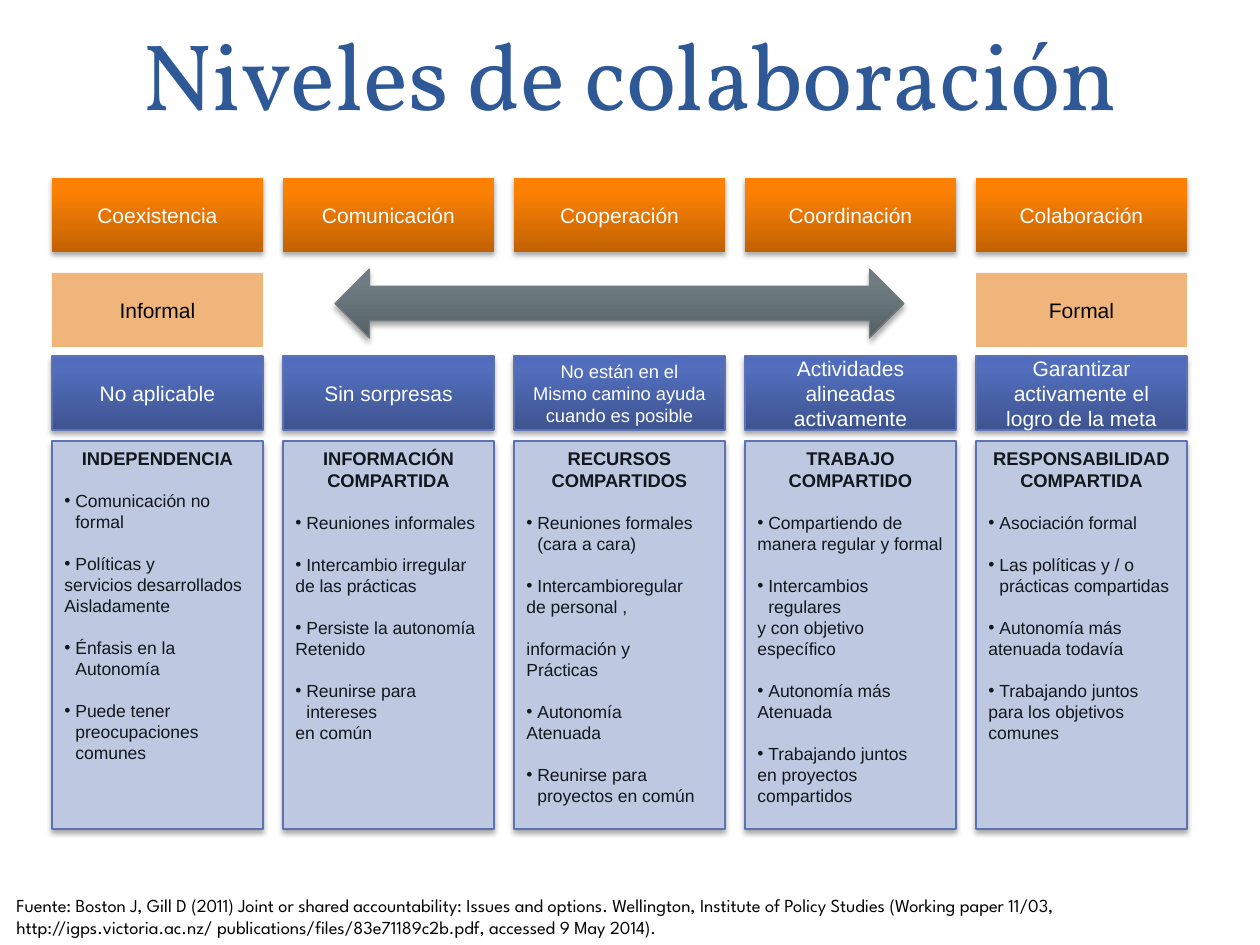
from lxml.etree import SubElement
from pptx import Presentation
from pptx.dml.color import RGBColor
from pptx.enum.shapes import MSO_SHAPE
from pptx.enum.text import MSO_ANCHOR, PP_ALIGN
from pptx.oxml.ns import qn
from pptx.util import Pt

SCALE = 914400 / 126
LEFT, STEP, WIDE, HIGH = 52, 231, 211, 74
HANG = 11
COLORS = {
    "title": "2F5897", "white": "FFFFFF", "black": "000000", "ink": "11171D",
    "peach": "F0B57A", "panel": "BFC8E1", "edge": "5C72B2", "rim": "727D82",
}
BLENDS = {
    "orange": ("C26203", "FB8004", "FF8002"),
    "blue": ("3E5490", "516DBB", "4F6CBE"),
    "gray": ("566065", "6F7D83", "6F7E84"),
}
LEVELS = ["Coexistencia", "Comunicación", "Cooperación", "Coordinación", "Colaboración"]
GOALS = [
    ("No aplicable", 12),
    ("Sin sorpresas", 12),
    ("No están en el\nMismo camino ayuda cuando es posible", 10.5),
    ("Actividades alineadas activamente", 12),
    ("Garantizar activamente el logro de la meta", 12),
]
CARDS = [
    ("INDEPENDENCIA", [
        ["Comunicación no formal"],
        ["Políticas y", "servicios desarrollados", "Aisladamente"],
        ["Énfasis en la Autonomía"],
        ["Puede tener preocupaciones comunes"]]),
    ("INFORMACIÓN\nCOMPARTIDA", [
        ["Reuniones informales"],
        ["Intercambio irregular", "de las prácticas"],
        ["Persiste la autonomía", "Retenido"],
        ["Reunirse para intereses", "en común"]]),
    ("RECURSOS COMPARTIDOS", [
        ["Reuniones formales (cara a cara)"],
        ["Intercambioregular", "de personal ,"],
        ["", "información y", "Prácticas"],
        ["Autonomía", "Atenuada"],
        ["Reunirse para proyectos en común"]]),
    ("TRABAJO COMPARTIDO", [
        ["Compartiendo de", "manera regular y formal"],
        ["Intercambios regulares", "y con objetivo\vespecífico"],
        ["Autonomía más", "Atenuada"],
        ["Trabajando juntos", "en proyectos compartidos"]]),
    ("RESPONSABILIDAD\nCOMPARTIDA", [
        ["Asociación formal"],
        ["Las políticas y / o prácticas compartidas"],
        ["Autonomía más", "atenuada todavía"],
        ["Trabajando juntos", "para los objetivos comunes"]]),
]
SOURCE = (
    "Fuente: Boston J, Gill D (2011) Joint or shared accountability: Issues and options. "
    "Wellington, Institute of Policy Studies (Working paper 11/03, "
    "http://igps.victoria.ac.nz/ publications/files/83e71189c2b.pdf, accessed 9 May 2014)."
)


def px(size):
    return int(size * SCALE)


def place(shape, *box):
    shape.left, shape.top, shape.width, shape.height = map(px, box)


def style(para, size, color, font="Arial", bold=False, align=PP_ALIGN.LEFT):
    para.alignment = align
    for run in para.runs:
        run.font.size = Pt(size)
        run.font.name = font
        run.font.bold = bold
        run.font.color.rgb = RGBColor.from_string(COLORS[color])


def blend(shape, name):
    shape.fill.gradient()
    shape.fill.gradient_angle = 90
    stops = shape._element.spPr.find(".//" + qn("a:gsLst"))
    for stop in list(stops):
        stops.remove(stop)
    for spot, color in zip((0, 80, 100), BLENDS[name]):
        stop = SubElement(stops, qn("a:gs"), pos=str(spot * 1000))
        SubElement(stop, qn("a:srgbClr"), val=color)


def shade(shape):
    effects = shape._element.spPr.find(qn("a:effectLst"))
    shadow = SubElement(effects, qn("a:outerShdw"), blurRad=str(Pt(3.1)), dist=str(Pt(1.8)),
                        dir="5400000", algn="ctr", rotWithShape="0")
    color = SubElement(shadow, qn("a:srgbClr"), val=COLORS["black"])
    SubElement(color, qn("a:alpha"), val="35000")


def add_block(slide, box, fill, line=None, deep=True, kind=MSO_SHAPE.RECTANGLE):
    shape = slide.shapes.add_shape(kind, *map(px, box))
    shape.shadow.inherit = False
    if fill in BLENDS:
        blend(shape, fill)
    else:
        shape.fill.solid()
        shape.fill.fore_color.rgb = RGBColor.from_string(COLORS[fill])
    if line:
        shape.line.color.rgb = RGBColor.from_string(COLORS[line])
        shape.line.width = Pt(0.75)
    else:
        shape.line.fill.background()
    if deep:
        shade(shape)
    return shape


def add_label(slide, box, text, fill, color="white", size=12, **look):
    shape = add_block(slide, box, fill, **look)
    shape.text_frame.text = text
    for para in shape.text_frame.paragraphs:
        style(para, size, color, align=PP_ALIGN.CENTER)


def add_dot(para):
    props = para._p.get_or_add_pPr()
    props.set("marL", str(px(HANG)))
    props.set("indent", str(-px(HANG)))
    SubElement(props, qn("a:buFont"), typeface="Arial")
    SubElement(props, qn("a:buChar"), char="•")


def add_card(slide, box, head, items):
    frame = add_block(slide, box, "panel", "edge").text_frame
    frame.vertical_anchor = MSO_ANCHOR.TOP
    frame.text = head
    for para in frame.paragraphs:
        style(para, 10.5, "ink", bold=True, align=PP_ALIGN.CENTER)
    for first, *rest in items:
        lines = [first, *rest] if first else rest
        for index, text in enumerate(lines):
            para = frame.add_paragraph()
            para.text = text
            if index == 0:
                if first:
                    add_dot(para)
                para.space_before = Pt(12)
            style(para, 10, "ink")


def add_title(slide, text):
    title = slide.shapes.title
    place(title, 63, 0, 1134, 136)
    title.text_frame.text = text
    title.text_frame.vertical_anchor = MSO_ANCHOR.BOTTOM
    para = title.text_frame.paragraphs[0]
    para.line_spacing = Pt(58)
    style(para, 54, "title", "Vollkorn", align=PP_ALIGN.CENTER)


def add_note(slide, text):
    frame = slide.shapes.add_textbox(*map(px, (4, 888, 1256, 57))).text_frame
    frame.word_wrap = True
    frame.text = text
    style(frame.paragraphs[0], 10.5, "black", "League Spartan")


def main():
    deck = Presentation()
    deck.slide_width, deck.slide_height = px(1260), px(945)
    slide = deck.slides.add_slide(deck.slide_layouts[5])
    add_title(slide, "Niveles de colaboración")
    spots = [LEFT + STEP * index for index in range(len(LEVELS))]
    for left, level, (goal, size), (head, items) in zip(spots, LEVELS, GOALS, CARDS):
        add_label(slide, (left, 178, WIDE, HIGH), level, "orange")
        add_label(slide, (left, 356, WIDE, HIGH), goal, "blue", size=size, line="edge")
        add_card(slide, (left, 441, WIDE, 388), head, items)
    for left, text in ((spots[0], "Informal"), (spots[-1], "Formal")):
        add_label(slide, (left, 273, WIDE, HIGH), text, "peach", "black", deep=False)
    add_block(slide, (335, 269, 569, 69), "gray", "rim", kind=MSO_SHAPE.LEFT_RIGHT_ARROW)
    add_note(slide, SOURCE)
    deck.save("out.pptx")


if __name__ == "__main__":
    main()
